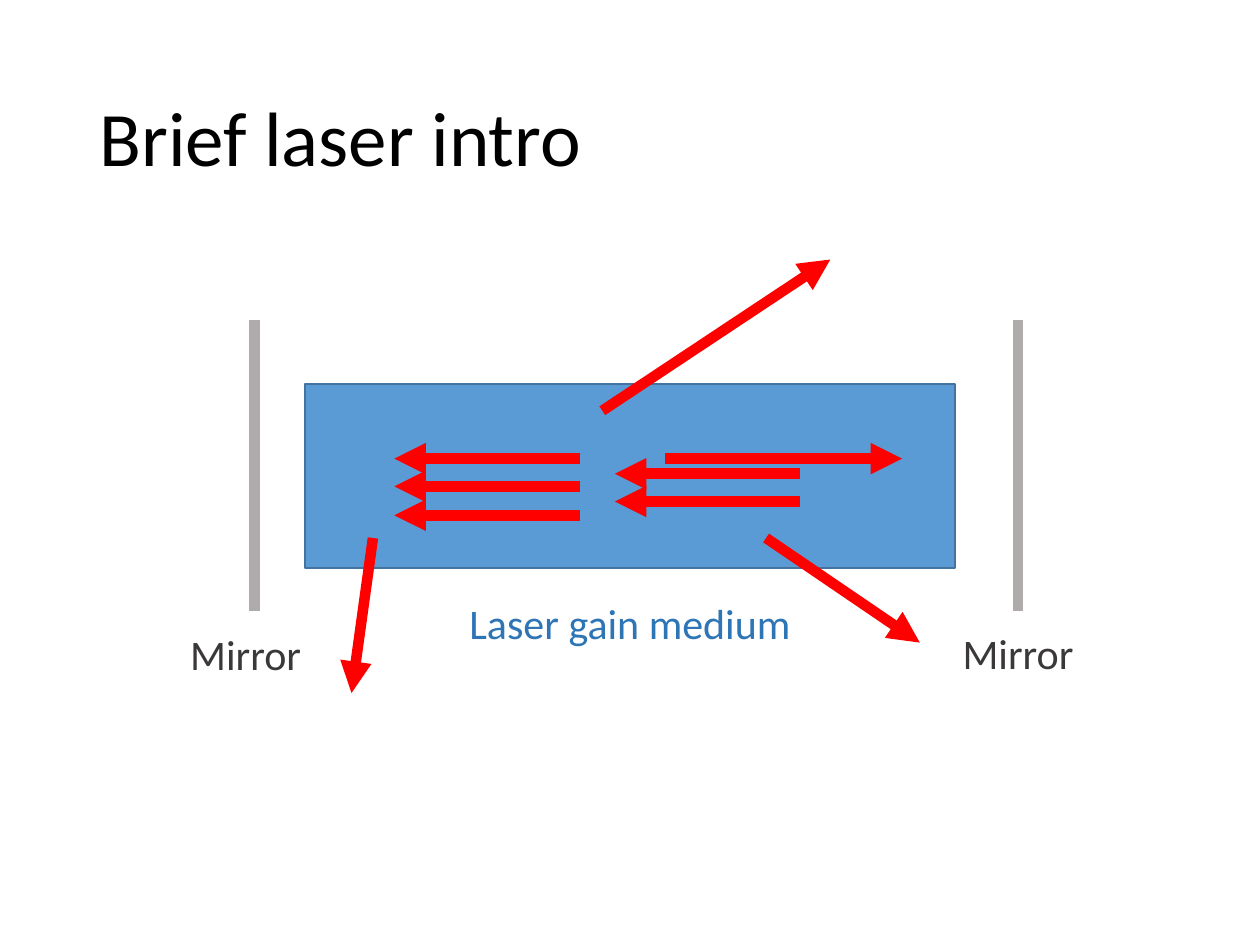
from dataclasses import dataclass

from lxml import etree
from pptx import Presentation
from pptx import util as u
from pptx.dml.color import RGBColor
from pptx.enum import shapes, text
from pptx.oxml.ns import qn


@dataclass(frozen=True)
class Theme:
    font: str = "Calibri"
    title_size: int = 44
    label_size: int = 24
    beam_width: int = 6
    title: str = "000000"
    medium: str = "5B9BD5"
    medium_edge: str = "43739E"
    medium_label: str = "2E75B6"
    mirror: str = "AFABAB"
    mirror_label: str = "3B3838"
    light: str = "FF0000"


THEME = Theme()
COLUMNS, ROWS = 100, 75
WIDTH, HEIGHT = u.Inches(10), u.Inches(7.5)


def grid(column, row):
    return round(WIDTH * column / COLUMNS), round(HEIGHT * row / ROWS)


def rgb(value):
    return RGBColor.from_string(value)


def place(box, column, row, columns, rows):
    box.left, box.top = grid(column, row)
    box.width, box.height = grid(columns, rows)


def write(box, words, size, color, align, anchor, wrap, spacing=None):
    frame = box.text_frame
    frame.word_wrap = wrap
    frame.vertical_anchor = anchor
    para = frame.paragraphs[0]
    para.alignment = align
    para.line_spacing = spacing
    span = para.add_run()
    span.text = words
    span.font.name = THEME.font
    span.font.size = u.Pt(size)
    span.font.color.rgb = rgb(color)


def add_title(page, words):
    box = page.shapes.title
    place(box, 6.9, 4, 86.2, 14.5)
    write(box, words, THEME.title_size, THEME.title, text.PP_ALIGN.LEFT,
          text.MSO_ANCHOR.MIDDLE, True, spacing=0.9)


def add_label(page, words, color, center, row, columns):
    box = page.shapes.add_textbox(*grid(center - columns / 2, row), *grid(columns, 5))
    box.text_frame.auto_size = text.MSO_AUTO_SIZE.SHAPE_TO_FIT_TEXT
    write(box, words, THEME.label_size, color, text.PP_ALIGN.CENTER,
          text.MSO_ANCHOR.TOP, False)


def add_medium(page):
    box = page.shapes.add_shape(shapes.MSO_SHAPE.RECTANGLE,
                                *grid(24.2, 30.5), *grid(51.6, 14.6))
    box.shadow.inherit = False
    box.fill.solid()
    box.fill.fore_color.rgb = rgb(THEME.medium)
    box.line.color.rgb = rgb(THEME.medium_edge)
    box.line.width = u.Pt(1)


def add_line(owner, start, end, color):
    line = owner.shapes.add_connector(shapes.MSO_CONNECTOR.STRAIGHT,
                                      *grid(*start), *grid(*end))
    line.line.color.rgb = rgb(color)
    line.line.width = u.Pt(THEME.beam_width)
    etree.SubElement(line._element.spPr, qn("a:effectLst"))
    return line


def add_arrow(owner, start, end):
    arrow = add_line(owner, start, end, THEME.light)
    etree.SubElement(arrow.line._get_or_add_ln(), qn("a:tailEnd"), type="triangle")


def add_beams(owner, start, end, rows):
    for row in rows:
        add_arrow(owner, (start, row), (end, row))


def main():
    deck = Presentation()
    deck.slide_width, deck.slide_height = WIDTH, HEIGHT
    page = deck.slides.add_slide(deck.slide_layouts[5])

    add_title(page, "Brief laser intro")
    add_medium(page)
    mirrors = (80.8, 20.2)
    for column in mirrors:
        add_line(page, (column, 48.5), (column, 25.4), THEME.mirror)
    add_label(page, "Laser gain medium", THEME.medium_label, 50, 46.9, 27.8)
    for column, row in zip(mirrors, (49.3, 49.4)):
        add_label(page, "Mirror", THEME.mirror_label, column - 0.7 * (column < 50), row, 10.9)

    add_beams(page, 52.8, 71.6, [36.4])
    escaping = page.shapes.add_group_shape()
    for start, end in [((47.8, 32.6), (65.9, 20.6)),
                       ((60.8, 42.7), (73, 51)),
                       ((29.6, 42.7), (27.9, 55))]:
        add_arrow(escaping, start, end)
    add_beams(page.shapes.add_group_shape(), 46, 31.3, [38.6, 40.9, 36.4])
    add_beams(page, 63.5, 48.8, [39.8, 37.6])

    deck.save("out.pptx")


if __name__ == "__main__":
    main()
